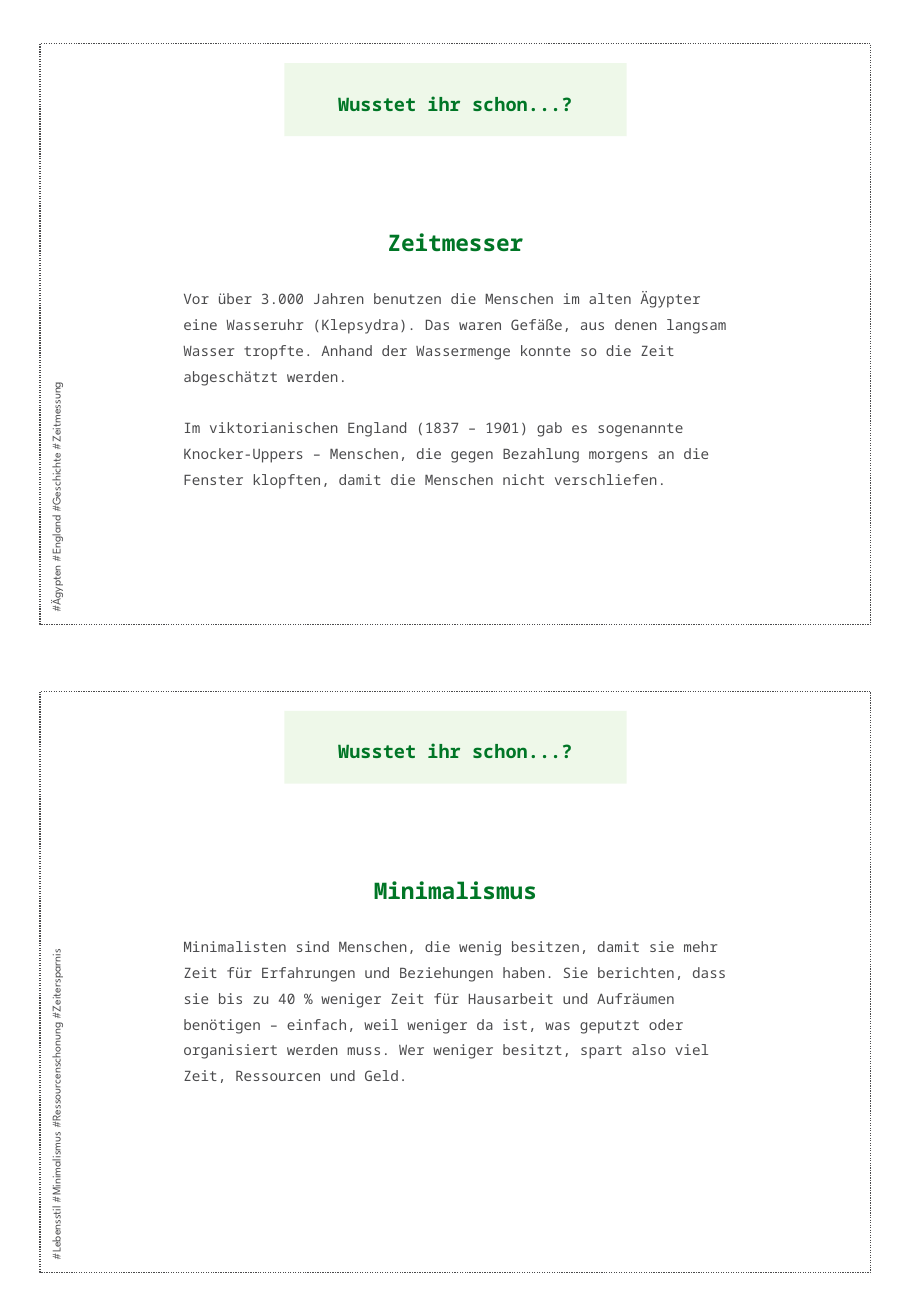
from dataclasses import dataclass

from lxml import etree
from pptx import Presentation
from pptx.dml import color as dml
from pptx.enum import dml as line, shapes, text
from pptx.oxml import ns
from pptx.util import Inches, Pt

HUE = {"green": "007626", "pale": "DEF2D4", "gray": "4B4B4D"}
MONO, SANS = "Noto Sans Mono", "League Spartan"
LEFT, WIDTH, HEIGHT = 0.33, 6.84, 4.78
HEAD = "Wusstet ihr schon...?"


@dataclass
class Card:
    """One fact card with its top edge in inches."""
    top: float
    name: str
    body: list[str]
    tags: str


CARDS = [
    Card(0.36, "Zeitmesser", [
        "Vor über 3.000 Jahren benutzen die Menschen im alten Ägypter eine "
        "Wasseruhr (Klepsydra). Das waren Gefäße, aus denen langsam Wasser "
        "tropfte. Anhand der Wassermenge konnte so die Zeit abgeschätzt werden.",
        "Im viktorianischen England (1837 – 1901) gab es sogenannte "
        "Knocker-Uppers – Menschen, die gegen Bezahlung morgens an die Fenster "
        "klopften, damit die Menschen nicht verschliefen.",
    ], "#Ägypten #England #Geschichte #Zeitmessung"),
    Card(5.69, "Minimalismus", [
        "Minimalisten sind Menschen, die wenig besitzen, damit sie mehr Zeit "
        "für Erfahrungen und Beziehungen haben. Sie berichten, dass sie bis zu "
        "40 % weniger Zeit für Hausarbeit und Aufräumen benötigen – einfach, "
        "weil weniger da ist, was geputzt oder organisiert werden muss. Wer "
        "weniger besitzt, spart also viel Zeit, Ressourcen und Geld.",
    ], "#Lebensstil #Minimalismus #Ressourcenschonung #Zeitersparnis"),
]


def rgb(name: str) -> dml.RGBColor:
    """Look up a colour by name."""
    return dml.RGBColor.from_string(HUE[name])


def style(par, size: float, hue: str, face: str = MONO, bold: bool = False) -> None:
    """Set the font of a whole paragraph."""
    font = par.font
    font.name, font.size, font.bold = face, Pt(size), bold
    font.color.rgb = rgb(hue)


def prep(frame, side: float, top: float) -> None:
    """Give a text frame its margins, wrapping and top anchor."""
    frame.word_wrap = True
    frame.auto_size = text.MSO_AUTO_SIZE.NONE
    frame.vertical_anchor = text.MSO_ANCHOR.TOP
    frame.margin_left = frame.margin_right = Inches(side)
    frame.margin_top, frame.margin_bottom = Inches(top), Inches(0)


def band(shape, top: float) -> None:
    """Place and format the pale heading band of a card."""
    shape.left, shape.top = Inches(2.34), Inches(top + 0.16)
    shape.width, shape.height = Inches(2.82), Inches(0.6)
    shape.fill.solid()
    shape.fill.fore_color.rgb = rgb("pale")
    tint = shape.fill._xPr.find(".//" + ns.qn("a:srgbClr"))
    etree.SubElement(tint, ns.qn("a:alpha")).set("val", "50000")
    shape.line.fill.background()
    prep(shape.text_frame, 0, 0.15)
    par = shape.text_frame.paragraphs[0]
    par.text, par.alignment, par.line_spacing = HEAD, text.PP_ALIGN.CENTER, 1.5
    style(par, 11, "green", bold=True)


def rect(slide, left: float, top: float, width: float, height: float):
    """Add a rectangle without a shadow."""
    shape = slide.shapes.add_shape(
        shapes.MSO_SHAPE.RECTANGLE, *map(Inches, (left, top, width, height)))
    shape.shadow.inherit = False
    return shape


def panel(slide, card: Card) -> None:
    """Draw the dotted frame with the fact's name and body."""
    shape = rect(slide, LEFT, card.top, WIDTH, HEIGHT)
    shape.fill.background()
    shape.line.color.rgb = rgb("gray")
    shape.line.width = Pt(0.75)
    shape.line.dash_style = line.MSO_LINE.ROUND_DOT
    frame = shape.text_frame
    prep(frame, 1.18, 1.41)
    par = frame.paragraphs[0]
    par.text, par.alignment, par.line_spacing = card.name, text.PP_ALIGN.CENTER, 1.5
    style(par, 13.5, "green", bold=True)
    for part in card.body:
        par = frame.add_paragraph()
        par.text, par.alignment, par.line_spacing = part, text.PP_ALIGN.LEFT, 1.5
        par.space_before = Pt(15.3)
        style(par, 8.5, "gray")


def label(slide, card: Card) -> None:
    """Add the upright tag line at the card's left edge."""
    deep = 0.26
    mid = card.top + HEIGHT / 2
    box = slide.shapes.add_textbox(
        Inches(-1.93), Inches(mid - deep / 2), Inches(HEIGHT), Inches(deep))
    box.rotation = 270
    frame = box.text_frame
    frame.word_wrap = True
    frame.vertical_anchor = text.MSO_ANCHOR.MIDDLE
    frame.text = card.tags
    style(frame.paragraphs[0], 7, "gray", SANS)


def main() -> None:
    """Build the page of fact cards."""
    deck = Presentation()
    deck.slide_width, deck.slide_height = Inches(7.5), Inches(10.83)
    slide = deck.slides.add_slide(deck.slide_layouts[5])
    for spot, card in enumerate(CARDS):
        band(rect(slide, 0, 0, 1, 1) if spot else slide.shapes.title, card.top)
        panel(slide, card)
        label(slide, card)
    deck.save("out.pptx")


if __name__ == "__main__":
    main()
